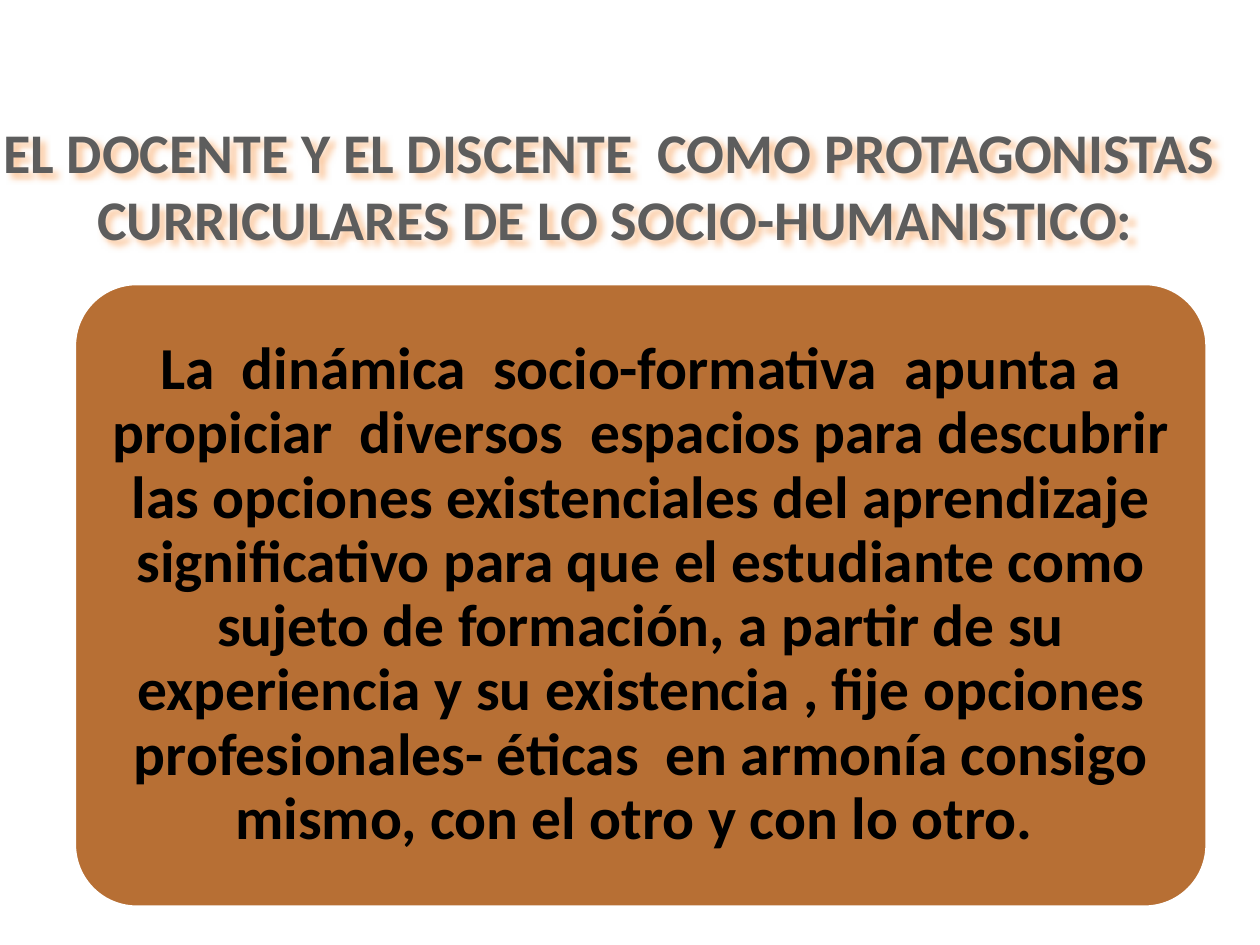
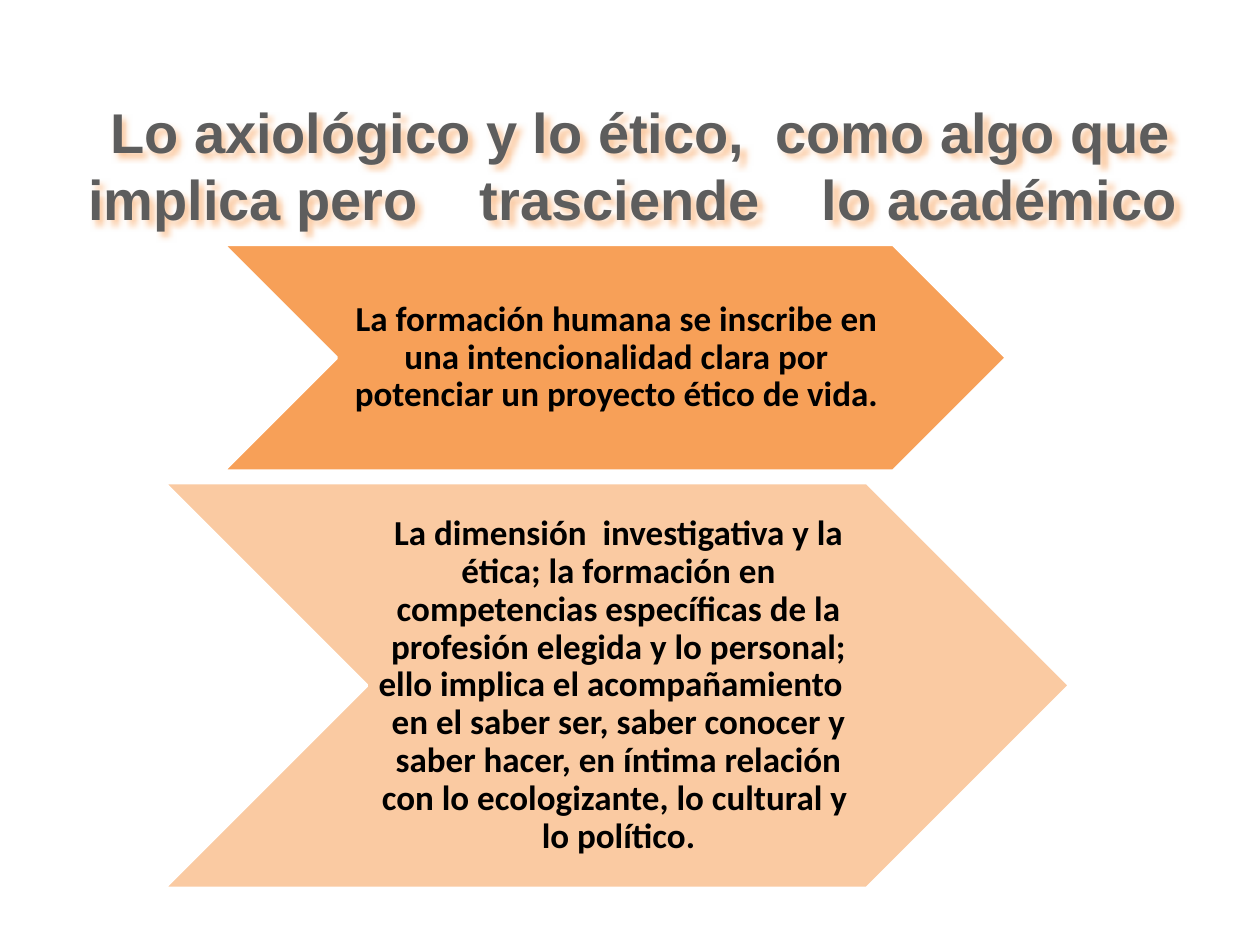
"""Build two slides on socio-humanistic teaching and its ethical side."""
from dataclasses import dataclass

from lxml import etree
from pptx import Presentation
from pptx.dml.color import RGBColor
from pptx.enum import shapes, text
from pptx.oxml import parse_xml
from pptx.oxml.ns import nsdecls, qn
from pptx.util import Pt


@dataclass(frozen=True)
class Theme:
    title: str = "5D5D5D"
    glow: str = "FBC9A0"
    ink: str = "000000"
    border: str = "FFFFFF"
    brown: str = "B76F34"
    orange: str = "F79646"
    body_font: str = "Calibri"
    heading_font: str = "Arial"
    title_size: int = 32
    statement_size: int = 34
    chevron_size: int = 20
    border_width: int = 2


theme = Theme()


def write(shape, wording, font_name, size, color, line_spacing=1.0):
    """Put one bold centred paragraph in the middle of a shape."""
    frame = shape.text_frame
    frame.text = wording
    frame.word_wrap = True
    frame.auto_size = text.MSO_AUTO_SIZE.NONE
    frame.vertical_anchor = text.MSO_ANCHOR.MIDDLE
    paragraph = frame.paragraphs[0]
    paragraph.alignment = text.PP_ALIGN.CENTER
    paragraph.line_spacing = line_spacing
    for run in paragraph.runs:
        run.font.name = font_name
        run.font.size = Pt(size)
        run.font.bold = True
        run.font.color.rgb = RGBColor.from_string(color)


slides = [
    {
        "title": "EL DOCENTE Y EL DISCENTE  COMO PROTAGONISTAS \vCURRICULARES DE LO SOCIO-HUMANISTICO:",
        "title_font": theme.body_font,
        "title_box": (-76.3, 60.5, 856, 90),
        "panels": [
            {
                "kind": shapes.MSO_SHAPE.ROUNDED_RECTANGLE,
                "adjustment": 0.1,
                "box": (42.5, 162, 647.3, 356.4),
                "fill": theme.brown,
                "opacity": 100,
                "size": theme.statement_size,
                "insets": (10, 10, 10, 10),
                "text": "La  dinámica  socio-formativa  apunta a propiciar  diversos  espacios "
                        "para descubrir las opciones existenciales del aprendizaje significativo "
                        "para que el estudiante como sujeto de formación, a partir de su "
                        "experiencia y su existencia , fije opciones profesionales- éticas  en "
                        "armonía consigo mismo, con el otro y con lo otro. ",
            },
        ],
    },
    {
        "title": "Lo axiológico y lo ético,  como algo que implica pero    trasciende    lo académico ",
        "title_font": theme.heading_font,
        "title_box": (42.5, 49, 648, 90),
        "panels": [
            {
                "kind": shapes.MSO_SHAPE.CHEVRON,
                "adjustment": 0.5,
                "box": (127.4, 139.7, 447.8, 129.6),
                "fill": theme.orange,
                "opacity": 90,
                "size": theme.chevron_size,
                "insets": (2, 1, 0, 1),
                "text": "La formación humana se inscribe en una intencionalidad clara por "
                        "potenciar un proyecto ético de vida.",
            },
            {
                "kind": shapes.MSO_SHAPE.CHEVRON,
                "adjustment": 0.5,
                "box": (93.6, 275.8, 517.7, 231.8),
                "fill": theme.orange,
                "opacity": 50,
                "size": theme.chevron_size,
                "insets": (2, 1, 0, 1),
                "text": "La dimensión  investigativa y la ética; la formación en competencias "
                        "específicas de la profesión elegida y lo personal; ello implica el "
                        "acompañamiento   en el saber ser, saber conocer y saber hacer, en íntima "
                        "relación con lo ecologizante, lo cultural y  lo político.",
            },
        ],
    },
]

presentation = Presentation()
presentation.slide_width, presentation.slide_height = Pt(720), Pt(540)
title_only = presentation.slide_layouts[5]

for content in slides:
    slide = presentation.slides.add_slide(title_only)
    title = slide.shapes.title
    title.left, title.top, title.width, title.height = map(Pt, content["title_box"])
    write(title, content["title"], content["title_font"], theme.title_size, theme.title)
    title.element.spPr.append(parse_xml(
        f'<a:effectLst {nsdecls("a")}><a:outerShdw blurRad="50800" dist="38100" dir="2700000">'
        f'<a:srgbClr val="{theme.glow}"/></a:outerShdw></a:effectLst>'))

    for panel in content["panels"]:
        shape = slide.shapes.add_shape(panel["kind"], *map(Pt, panel["box"]))
        shape.adjustments[0] = panel["adjustment"]
        shape.shadow.inherit = False
        shape.fill.solid()
        shape.fill.fore_color.rgb = RGBColor.from_string(panel["fill"])
        if panel["opacity"] < 100:
            color = shape.element.spPr.find(qn("a:solidFill")).find(qn("a:srgbClr"))
            etree.SubElement(color, qn("a:alpha"), val=str(panel["opacity"] * 1000))
        shape.line.color.rgb = RGBColor.from_string(theme.border)
        shape.line.width = Pt(theme.border_width)
        write(shape, panel["text"], theme.body_font, panel["size"], theme.ink, 0.9)
        frame = shape.text_frame
        (frame.margin_left, frame.margin_top,
         frame.margin_right, frame.margin_bottom) = map(Pt, panel["insets"])

presentation.save("out.pptx")
